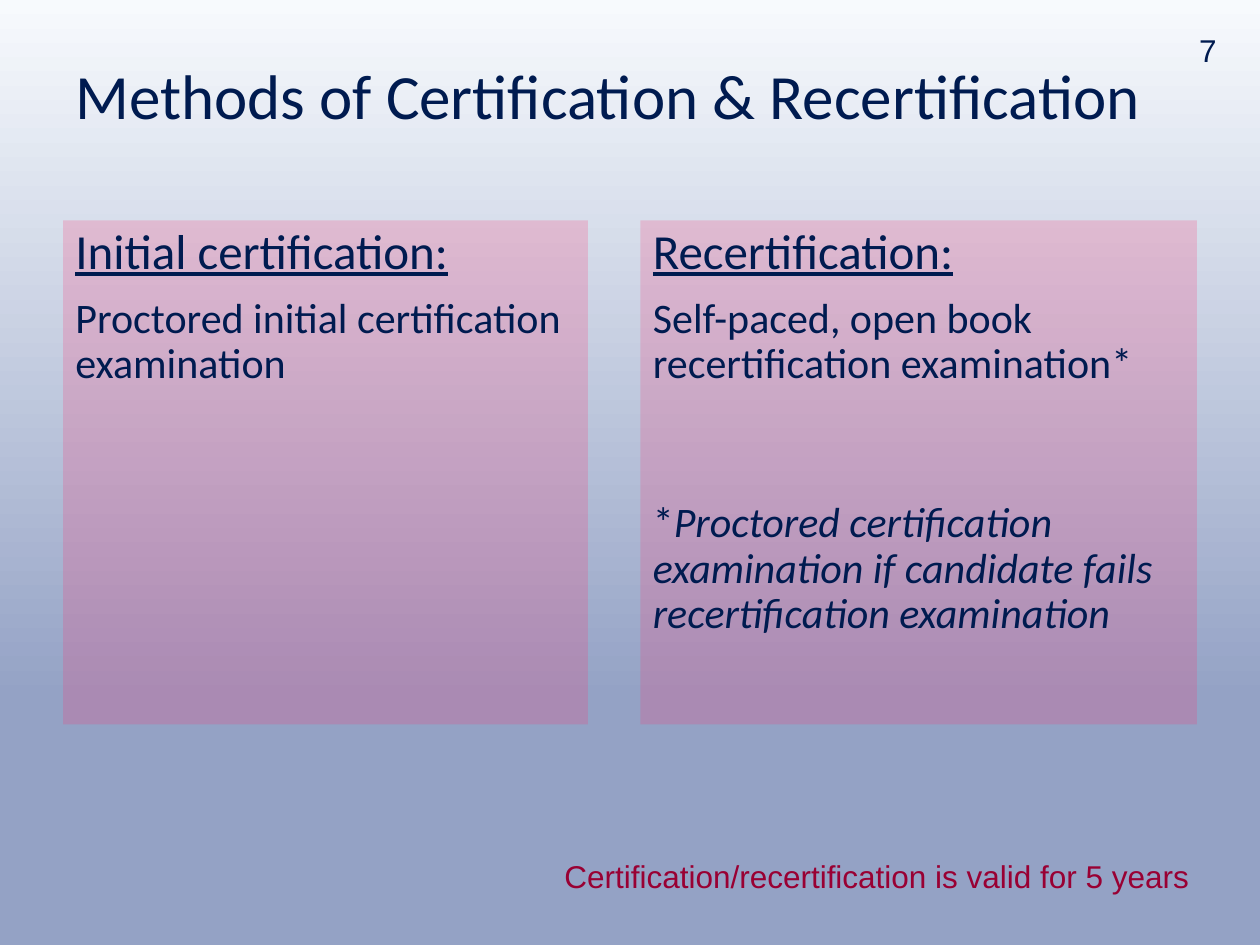
from dataclasses import dataclass

from lxml import etree
from pptx import Presentation
from pptx.dml.color import RGBColor
from pptx.enum.shapes import MSO_SHAPE
from pptx.enum.text import MSO_ANCHOR, PP_ALIGN
from pptx.oxml.ns import qn
from pptx.util import Pt

RECTANGLE = MSO_SHAPE.RECTANGLE
TOP, MIDDLE = MSO_ANCHOR.TOP, MSO_ANCHOR.MIDDLE
LEFT = PP_ALIGN.LEFT

NAVY = RGBColor(0x00, 0x1B, 0x50)
CRIMSON = RGBColor(0x99, 0x00, 0x33)
PINK = RGBColor(0xFC, 0x33, 0x71)
SKY = RGBColor(0xF7, 0xFA, 0xFD)
STEEL = RGBColor(0x94, 0xA2, 0xC5)

PANEL_TOP, PANEL_HEIGHT = 126, 288
PANEL_OPACITY = 21  # percent


@dataclass
class Line:
    text: str
    size: float
    font: str = "Calibri"
    color: RGBColor = NAVY
    spacing: float = 0.9
    before: float = 0
    underline: bool = False
    italic_from: int | None = None  # first italic character


@dataclass
class Label:
    left: float
    top: float
    width: float
    height: float
    line: Line
    anchor: MSO_ANCHOR = TOP
    wrap: bool = True


@dataclass
class Panel:
    left: float
    width: float
    lines: list[Line]


LABELS = [
    Label(36, 28.8, 648, 55.4,
          Line("Methods of Certification & Recertification", 36), MIDDLE),
    Label(315.4, 486, 420, 29,
          Line("Certification/recertification is valid for 5 years", 18,
               "Arial", CRIMSON, 1)),
    Label(678.2, 14.4, 24.5, 29, Line("7", 18, "Arial", spacing=1), wrap=False),
]

PANELS = [
    Panel(36, 300, [
        Line("Initial certification:", 28, underline=True),
        Line("Proctored initial certification examination", 24, before=10),
    ]),
    Panel(366, 318, [
        Line("Recertification:", 28, underline=True),
        Line("Self-paced, open book recertification examination*", 24, before=10),
        Line("*Proctored certification examination if candidate fails "
             "recertification examination", 24, before=65, italic_from=1),
    ]),
]


def write_lines(frame, lines: list[Line]) -> None:
    frame.text = "\n".join(line.text for line in lines)
    for paragraph, line in zip(frame.paragraphs, lines):
        paragraph.alignment = LEFT
        paragraph.line_spacing = line.spacing
        paragraph.space_before = Pt(line.before)
        if line.italic_from is not None:
            paragraph.runs[0].text = line.text[:line.italic_from]
            italic_run = paragraph.add_run()
            italic_run.text = line.text[line.italic_from:]
            italic_run.font.italic = True
        for run in paragraph.runs:
            run.font.name = line.font
            run.font.size = Pt(line.size)
            run.font.color.rgb = line.color
            run.font.underline = line.underline


def draw_label(slide, label: Label) -> None:
    box = slide.shapes.add_textbox(Pt(label.left), Pt(label.top),
                                   Pt(label.width), Pt(label.height))
    box.text_frame.word_wrap = label.wrap
    box.text_frame.vertical_anchor = label.anchor
    write_lines(box.text_frame, [label.line])


def draw_panel(slide, panel: Panel) -> None:
    card = slide.shapes.add_shape(RECTANGLE, Pt(panel.left), Pt(PANEL_TOP),
                                  Pt(panel.width), Pt(PANEL_HEIGHT))
    card.shadow.inherit = False
    card.line.fill.background()
    card.fill.solid()
    card.fill.fore_color.rgb = PINK
    color = card.fill._xPr.find(qn("a:solidFill")).find(qn("a:srgbClr"))
    etree.SubElement(color, qn("a:alpha"), val=str(PANEL_OPACITY * 1000))
    card.text_frame.word_wrap = True
    card.text_frame.vertical_anchor = TOP
    write_lines(card.text_frame, panel.lines)


def draw_background(slide) -> None:
    fill = slide.background.fill
    fill.gradient()
    fill.gradient_angle = 270  # top to bottom
    for stop, position, color in zip(fill.gradient_stops, (0, 0.74), (SKY, STEEL)):
        stop.position = position
        stop.color.rgb = color


def main() -> None:
    deck = Presentation()
    deck.slide_width, deck.slide_height = Pt(720), Pt(540)
    slide = deck.slides.add_slide(deck.slide_layouts[6])
    draw_background(slide)

    # Two methods side by side
    for panel in PANELS:
        draw_panel(slide, panel)

    # Title, validity note and page number
    for label in LABELS:
        draw_label(slide, label)

    deck.save("out.pptx")


if __name__ == "__main__":
    main()
